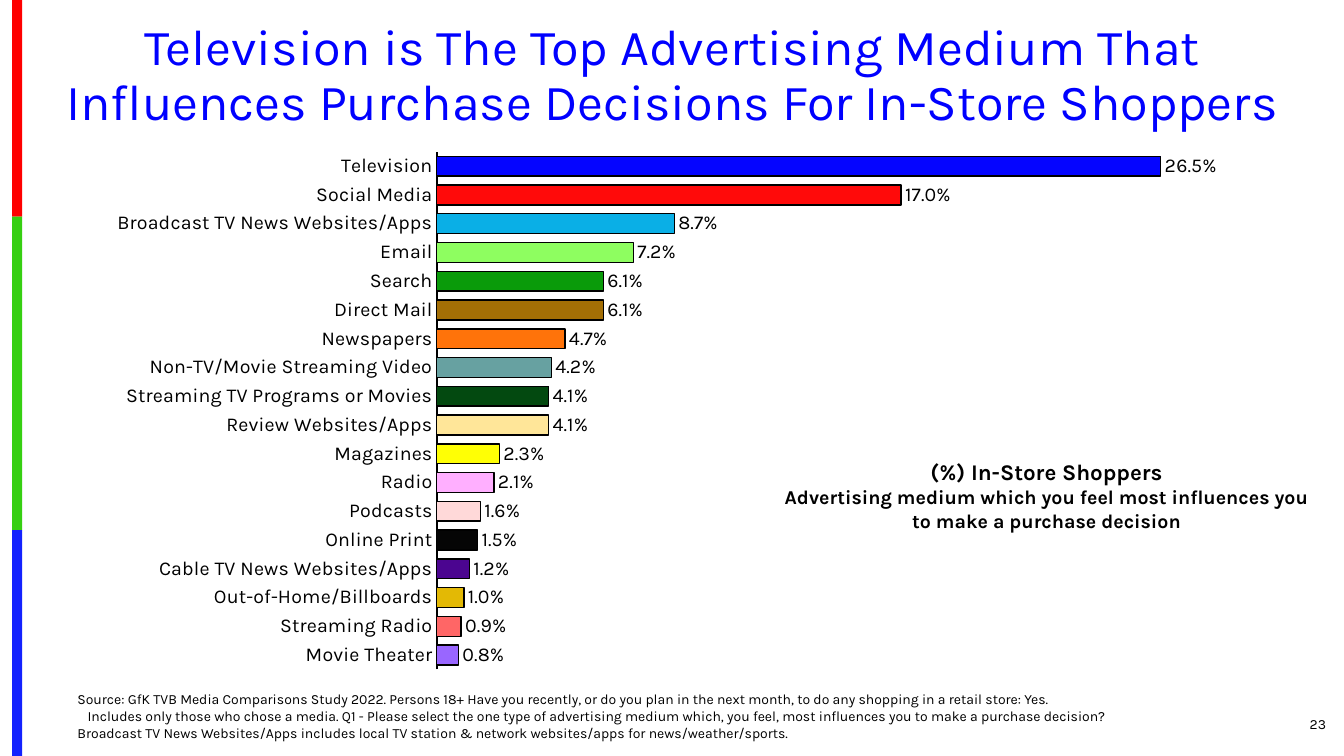
"""Build the slide on advertising media that influence in-store shoppers."""
import pptx
import pptx.chart.data
import pptx.dml.color
import pptx.enum.chart
import pptx.enum.shapes
import pptx.enum.text
import pptx.oxml
import pptx.oxml.ns
import pptx.util

Inches, Pt = pptx.util.Inches, pptx.util.Pt
ALIGN, ANCHOR = pptx.enum.text.PP_ALIGN, pptx.enum.text.MSO_ANCHOR

FONT = "Karla"
COLORS = {"title": "0000FF", "text": "000000", "series": "CCCCCC"}
TITLE = ["Television is The Top Advertising Medium That",
         "Influences Purchase Decisions For In-Store Shoppers"]
STRIPES = [("FE0000", 2.15), ("36CF12", 3.11), ("1322FE", 2.24)]
MEDIA = [
    ("Television", 0.265, "0505FF"),
    ("Social Media", 0.17, "FF0A0A"),
    ("Broadcast TV News Websites/Apps", 0.087, "0AAFE6"),
    ("Email", 0.072, "8EFE60"),
    ("Search", 0.061, "0A9B0A"),
    ("Direct Mail", 0.061, "A46F05"),
    ("Newspapers", 0.047, "FF730A"),
    ("Non-TV/Movie Streaming Video", 0.042, "67A1A1"),
    ("Streaming TV Programs or Movies", 0.041, "034910"),
    ("Review Websites/Apps", 0.041, "FFE699"),
    ("Magazines", 0.023, "FFFF05"),
    ("Radio", 0.021, "FFAFFF"),
    ("Podcasts", 0.016, "FFD9D9"),
    ("Online Print", 0.015, "050505"),
    ("Cable TV News Websites/Apps", 0.012, "4B0590"),
    ("Out-of-Home/Billboards", 0.01, "E3B905"),
    ("Streaming Radio", 0.009, "FF6666"),
    ("Movie Theater", 0.008, "9966FF"),
]
CAPTION = [("(%) In-Store Shoppers", 16),
           ("Advertising medium which you feel most influences you to make a purchase decision", 14)]
SOURCE = [
    ("Source: GfK TVB Media Comparisons Study 2022. Persons 18+ Have you recently, or do you plan "
     "in the next month, to do any shopping in a retail store: Yes.", 10),
    ("Includes only those who chose a media. Q1 - Please select the one type of advertising medium "
     "which, you feel, most influences you to make a purchase decision?", 10),
    ("Broadcast TV News Websites/Apps includes local TV station & network websites/apps for "
     "news/weather/sports.", 10),
]
PAGE_NUMBER = [("23", 10)]
PLOT_AREA = {"x": 0.317, "y": 0.027, "w": 0.666, "h": 0.946}


def rgb(color):
    return pptx.dml.color.RGBColor.from_string(color)


def style(font, size, color=COLORS["text"], bold=False):
    font.name, font.size, font.bold = FONT, Pt(size), bold
    font.color.rgb = rgb(color)


def add_text(slide, box, lines, align, anchor, bold=False):
    frame = slide.shapes.add_textbox(*map(Inches, box)).text_frame
    frame.word_wrap, frame.vertical_anchor = True, anchor
    for index, (line, size) in enumerate(lines):
        paragraph = frame.paragraphs[0] if index == 0 else frame.add_paragraph()
        paragraph.alignment = align
        run = paragraph.add_run()
        run.text = line
        style(run.font, size, bold=bold)
    return frame


def add_stripes(slide):
    top = 0
    for color, height in STRIPES:
        stripe = slide.shapes.add_shape(pptx.enum.shapes.MSO_SHAPE.RECTANGLE, Inches(0.12),
                                        Inches(top), Inches(0.1), Inches(height))
        stripe.shadow.inherit = False
        stripe.fill.solid()
        stripe.fill.fore_color.rgb = rgb(color)
        stripe.line.fill.background()
        top += height


def add_title(slide):
    title = slide.shapes.title
    title.left, title.top, title.width, title.height = map(Inches, (0.46, 0.17, 12.42, 1.19))
    title.text_frame.word_wrap = True
    title.text_frame.vertical_anchor = ANCHOR.TOP
    paragraph = title.text_frame.paragraphs[0]
    paragraph.alignment, paragraph.line_spacing = ALIGN.CENTER, 0.9
    for index, line in enumerate(TITLE):
        if index:
            paragraph.add_line_break()
        run = paragraph.add_run()
        run.text = line
        style(run.font, 36, COLORS["title"])


def place_plot(chart):
    ns = pptx.oxml.ns
    area = chart.element.find(".//" + ns.qn("c:plotArea"))
    for layout in area.findall(ns.qn("c:layout")):
        area.remove(layout)
    modes = '<c:layoutTarget val="inner"/><c:xMode val="edge"/><c:yMode val="edge"/>'
    sizes = "".join(f'<c:{key} val="{value}"/>' for key, value in PLOT_AREA.items())
    area.insert(0, pptx.oxml.parse_xml(
        f'<c:layout {ns.nsdecls("c")}><c:manualLayout>{modes}{sizes}</c:manualLayout></c:layout>'))


def add_media_chart(slide):
    kinds = pptx.enum.chart
    names, shares, colors = zip(*MEDIA)
    data = pptx.chart.data.CategoryChartData(number_format="0.0%")
    data.categories = names
    data.add_series("Series 1", shares)
    chart = slide.shapes.add_chart(kinds.XL_CHART_TYPE.BAR_CLUSTERED,
                                   *map(Inches, (0.46, 1.36, 12.21, 5.43)), data).chart
    chart.has_legend = chart.has_title = False
    style(chart.font, 10)
    place_plot(chart)

    media_axis = chart.category_axis
    media_axis.reverse_order = True
    media_axis.major_tick_mark = kinds.XL_TICK_MARK.NONE
    media_axis.format.line.color.rgb = rgb(COLORS["text"])
    media_axis.format.line.width = Pt(1.5)
    style(media_axis.tick_labels.font, 14)

    share_axis = chart.value_axis
    share_axis.minimum_scale, share_axis.maximum_scale = 0, 0.3
    share_axis.has_major_gridlines = False
    share_axis.visible = False

    plot = chart.plots[0]
    plot.gap_width, plot.vary_by_categories = 45, False
    series = plot.series[0]
    series.format.fill.solid()
    series.format.fill.fore_color.rgb = rgb(COLORS["series"])
    for index, color in enumerate(colors):
        bar = series.points[index].format
        bar.fill.solid()
        bar.fill.fore_color.rgb = rgb(color)
        bar.line.color.rgb = rgb(COLORS["text"])
        bar.line.width = Pt(1)
    labels = series.data_labels
    labels.show_value = True
    labels.number_format, labels.number_format_is_linked = "0.0%", False
    labels.position = kinds.XL_LABEL_POSITION.OUTSIDE_END
    style(labels.font, 14)


def main():
    deck = pptx.Presentation()
    deck.slide_width, deck.slide_height = Inches(13.33), Inches(7.5)
    slide = deck.slides.add_slide(deck.slide_layouts[5])
    add_stripes(slide)
    add_title(slide)
    add_media_chart(slide)
    add_text(slide, (7.67, 4.5, 5.42, 0.84), CAPTION, ALIGN.CENTER, ANCHOR.TOP, bold=True)
    source = add_text(slide, (0.67, 6.79, 10.5, 0.61), SOURCE, ALIGN.LEFT, ANCHOR.BOTTOM)
    source.paragraphs[1]._p.get_or_add_pPr().set("marL", str(Inches(0.1)))
    add_text(slide, (12.17, 6.98, 1.08, 0.4), PAGE_NUMBER, ALIGN.RIGHT, ANCHOR.MIDDLE)
    deck.save("out.pptx")


if __name__ == "__main__":
    main()
